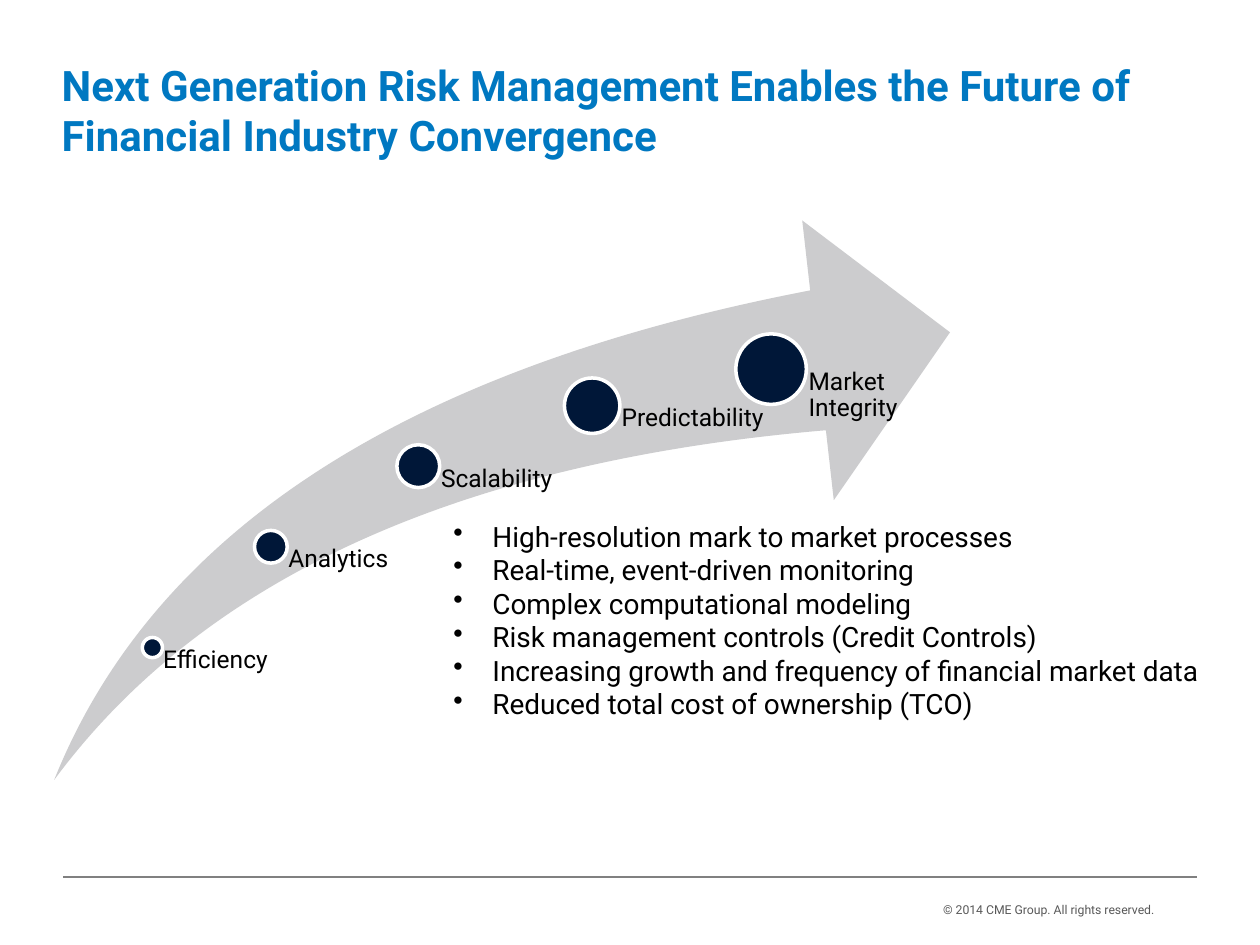
from pptx import Presentation
from pptx.dml.color import RGBColor
from pptx.enum.shapes import MSO_CONNECTOR, MSO_SHAPE
from pptx.enum.text import PP_ALIGN
from pptx.oxml.xmlchemy import OxmlElement
from pptx.util import Inches, Pt

FONT = "Roboto"
BLACK, NAVY, WHITE = "000000", "001738", "FFFFFF"
LABEL_BOTTOM = 6.2

# text, dot centre x, dot centre y, dot diameter, label width
MILESTONES = [
    ("Efficiency", 1.21, 5.14, 0.16, 1.46),
    ("Analytics", 2.15, 4.34, 0.26, 1.18),
    ("Scalability", 3.32, 3.7, 0.34, 1.37),
    ("Predictability", 4.7, 3.22, 0.44, 1.42),
    ("Market Integrity", 6.12, 2.93, 0.56, 1.65),
]
BENEFITS = [
    "High-resolution mark to market processes",
    "Real-time, event-driven monitoring",
    "Complex computational modeling",
    "Risk management controls (Credit Controls)",
    "Increasing growth and frequency of financial market data",
    "Reduced total cost of ownership (TCO)",
]


def color(value):
    return RGBColor.from_string(value)


def add_bullet(para, indent):
    properties = para._p.get_or_add_pPr()
    properties.set("marL", str(Inches(indent)))
    properties.set("indent", str(-Inches(indent)))
    bullet = OxmlElement("a:buChar")
    bullet.set("char", "•")
    properties.append(bullet)


def add_text(page, place, lines, size, ink=BLACK, bold=False, margins=None,
             wrap=True, bullet_indent=None, **para_format):
    """Margins are left, top, right, bottom in inches; None keeps the defaults."""
    box = page.shapes.add_textbox(*map(Inches, place))
    frame = box.text_frame
    frame.word_wrap = wrap
    if margins:
        for side, margin in zip(("left", "top", "right", "bottom"), margins):
            setattr(frame, f"margin_{side}", Inches(margin))
    for index, line in enumerate(lines):
        para = frame.add_paragraph() if index else frame.paragraphs[0]
        for name, value in para_format.items():
            setattr(para, name, value)
        if bullet_indent:
            add_bullet(para, bullet_indent)
        span = para.add_run()
        span.text = line
        for name, value in {"name": FONT, "size": Pt(size), "bold": bold}.items():
            setattr(span.font, name, value)
        span.font.color.rgb = color(ink)


def add_filled_shape(page, kind, place, fill, outline=None):
    shape = page.shapes.add_shape(kind, *map(Inches, place))
    shape.shadow.inherit = False
    shape.fill.solid()
    shape.fill.fore_color.rgb = color(fill)
    if outline:
        shape.line.color.rgb = color(outline)
        shape.line.width = Pt(2)
    else:
        shape.line.fill.background()
    return shape


def add_growth_arrow(page):
    arrow = add_filled_shape(page, MSO_SHAPE.SWOOSH_ARROW, (0.43, 1.75, 7.11, 4.44), "CCCCCE")
    for index in range(2):
        arrow.adjustments[index] = 0.25


def add_milestone(page, text, x, y, diameter, label_width):
    """Draw a dot, with a label that starts at its centre and is inset past its edge."""
    radius = diameter / 2
    add_filled_shape(page, MSO_SHAPE.OVAL, (x - radius, y - radius, diameter, diameter),
                     NAVY, outline=WHITE)
    add_text(page, (x, y, label_width, LABEL_BOTTOM - y), [text], 14,
             margins=(radius * 1.06, 0, 0, 0), line_spacing=0.9)


def add_footer(page):
    rule = page.shapes.add_connector(MSO_CONNECTOR.STRAIGHT, Inches(0.5), Inches(6.96),
                                     Inches(9.5), Inches(6.96))
    rule.line.color.rgb = color("808080")
    rule.line.width = Pt(0.75)
    rule._element.spPr.append(OxmlElement("a:effectLst"))
    add_text(page, (7.23, 7.11, 2.03, 0.22), ["© 2014 CME Group. All rights reserved."], 7,
             ink="595959", wrap=False, alignment=PP_ALIGN.RIGHT)


def main():
    deck = Presentation()
    deck.slide_width, deck.slide_height = Inches(10), Inches(7.5)
    page = deck.slides.add_slide(deck.slide_layouts[6])
    add_footer(page)
    add_text(page, (0.49, 0.47, 9.04, 0.8),
             ["Next Generation Risk Management Enables the Future of "
              "Financial Industry Convergence"],
             24, ink="0078C1", bold=True, margins=(0, 0, 0, 0))
    add_growth_arrow(page)
    for milestone in MILESTONES:
        add_milestone(page, *milestone)
    add_text(page, (3.5, 4.07, 6.25, 2.02), BENEFITS, 16, bullet_indent=0.31)
    deck.save("out.pptx")


if __name__ == "__main__":
    main()
